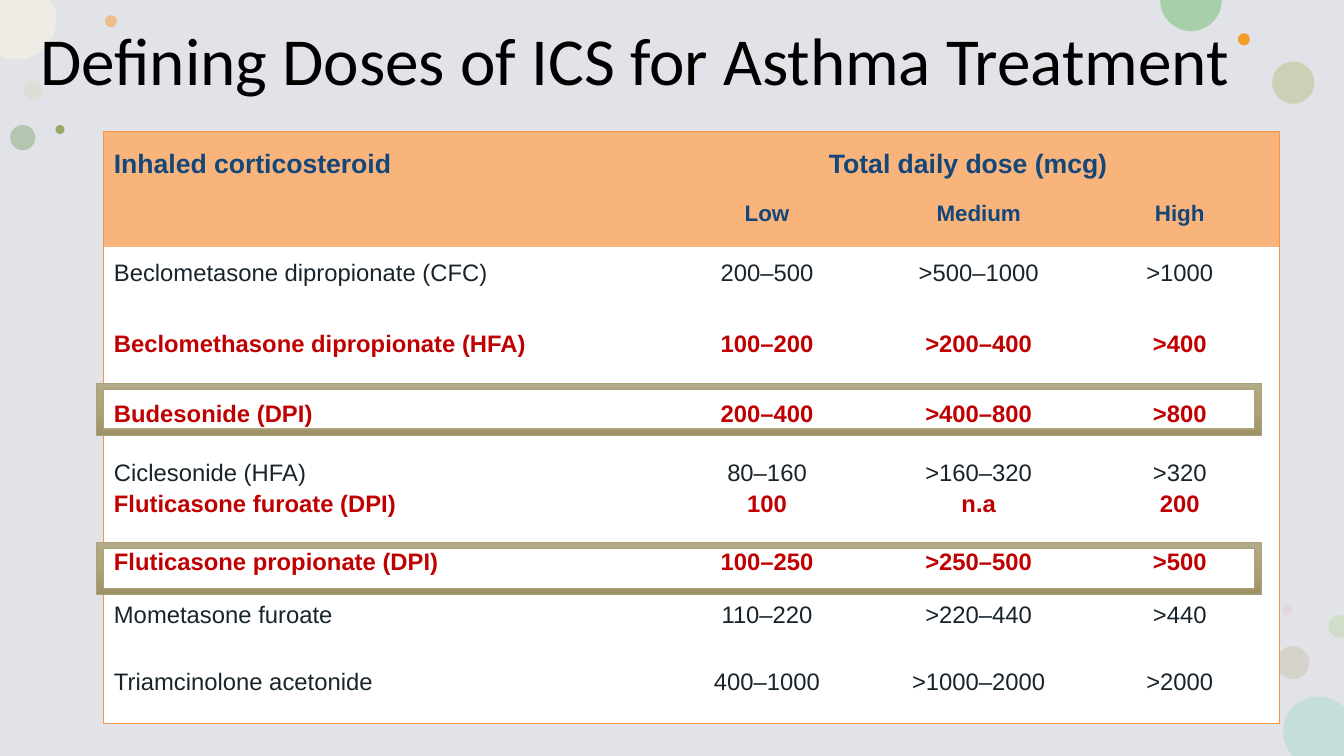
from copy import deepcopy

from lxml.etree import SubElement
from pptx import Presentation
from pptx.dml.color import RGBColor
from pptx.enum.shapes import MSO_SHAPE as Shape
from pptx.enum.text import MSO_ANCHOR as Anchor, MSO_AUTO_SIZE as Fit, PP_ALIGN as Align
from pptx.oxml import parse_xml
from pptx.oxml.ns import nsdecls, qn
from pptx.util import Inches, Pt

WIDE, HIGH = 40 / 3, 7.5
HUES = {
    "page": "E2E3E8", "black": "000000", "white": "FFFFFF",
    "head": "F9B47B", "edge": "F79646", "navy": "134679",
    "dark": "18242B", "red": "C00000", "rim": "AAA178",
    "top": "B3AB88", "mid": "ACA375", "low": "9C9266",
    "pale": "D6DCC3", "amber": "F39E29", "sand": "CCC7AE", "leaf": "8AAB79",
    "lime": "C2CBA4", "pink": "E3BEBE", "moss": "99A868",
    "aqua": "C4DEDB", "cream": "EEECE4", "mint": "A7D0AA", "sage": "D0DDC9",
}
# left, top, size, hue, opacity in percent
DOTS = [
    (0.23, 0.8, 0.19, "pale", 50), (1.04, 0.15, 0.12, "amber", 50),
    (12.66, 6.41, 0.33, "sand", 50), (0.1, 1.24, 0.25, "leaf", 50),
    (12.62, 0.61, 0.42, "lime", 72), (12.28, 0.33, 0.12, "amber", 100),
    (12.72, 6, 0.1, "pink", 28), (0.55, 1.24, 0.09, "moss", 100),
]
# hue, start, then steps: one point is a line, three points are a curve
DISCS = [
    ("aqua", (13.08, 6.91), [
        [(13.18, 6.91), (13.26, 6.95), (WIDE, 7.01)], [(WIDE, HIGH)],
        [(12.83, HIGH)], [(12.81, 7.48)],
        [(12.76, 7.42), (12.73, 7.34), (12.73, 7.26)],
        [(12.73, 7.06), (12.89, 6.91), (13.08, 6.91)]]),
    ("cream", (0, 0), [
        [(0.5, 0)], [(0.53, 0.05)],
        [(0.55, 0.09), (0.56, 0.14), (0.56, 0.2)],
        [(0.56, 0.41), (0.38, 0.59), (0.17, 0.59)],
        [(0.11, 0.59), (0.06, 0.58), (0.02, 0.56)], [(0, 0.55)]]),
    ("mint", (11.52, 0), [
        [(12.12, 0)], [(12.12, 0.01)],
        [(12.12, 0.17), (11.98, 0.31), (11.82, 0.31)],
        [(11.65, 0.31), (11.51, 0.17), (11.51, 0.01)]]),
    ("sage", (13.29, 6.1), [
        [(WIDE, 6.11)], [(WIDE, 6.32)], [(13.29, 6.33)],
        [(13.23, 6.33), (13.18, 6.28), (13.18, 6.21)],
        [(13.18, 6.15), (13.23, 6.1), (13.29, 6.1)]]),
]
COLS = [5.49, 2.18, 2.02, 1.97]
# row height, then one or more lines of (hue, texts)
DOSES = [
    (0.53, [("dark", ["Beclometasone dipropionate (CFC)", "200–500", ">500–1000", ">1000"])]),
    (0.87, [("red", ["Beclomethasone dipropionate (HFA)", "100–200", ">200–400", ">400"])]),
    (0.52, [("red", ["Budesonide (DPI)", "200–400", ">400–800", ">800"])]),
    (0.95, [("dark", ["Ciclesonide (HFA)", "80–160", ">160–320", ">320"]),
            ("red", ["Fluticasone furoate (DPI)", "100", "n.a", "200"])]),
    (0.52, [("red", ["Fluticasone propionate (DPI)", "100–250", ">250–500", ">500"])]),
    (0.52, [("dark", ["Mometasone furoate", "110–220", ">220–440", ">440"])]),
    (0.82, [("dark", ["Triamcinolone acetonide", "400–1000", ">1000–2000", ">2000"])]),
]


def rgb(hue):
    return RGBColor.from_string(HUES[hue])


def paint(shape, hue):
    shape.shadow.inherit = False
    shape.fill.solid()
    shape.fill.fore_color.rgb = rgb(hue)
    shape.line.fill.background()


def style(para, hue, **form):
    for key, val in form.items():
        setattr(para.font, key, val)
    para.font.color.rgb = rgb(hue)


def add_page(slide, left, top, width, height):
    page = slide.shapes.add_shape(Shape.RECTANGLE, *map(Inches, (left, top, width, height)))
    paint(page, "page")


def add_dot(slide, left, top, size, hue, part):
    dot = slide.shapes.add_shape(Shape.OVAL, *map(Inches, (left, top, size, size)))
    paint(dot, hue)
    if part < 100:
        tone = dot._element.spPr.find(f".//{qn('a:srgbClr')}")
        SubElement(tone, qn("a:alpha")).set("val", str(part * 1000))


def add_disc(slide, hue, start, steps):
    """Draw a circle cut off at the slide's edges, with true curves."""
    spots = [tuple(map(Inches, spot)) for step in steps for spot in step]
    pen = slide.shapes.build_freeform(*map(Inches, start))
    pen.add_line_segments(spots, close=True)
    disc = pen.convert_to_shape()
    lines = iter(disc._element.spPr.findall(f".//{qn('a:lnTo')}"))
    for step in steps:
        parts = [next(lines) for _ in step]
        if len(parts) == 3:
            curve = parse_xml(f'<a:cubicBezTo {nsdecls("a")}/>')
            parts[0].addprevious(curve)
            for part in parts:
                curve.append(part[0])
                part.getparent().remove(part)
    paint(disc, hue)


def add_title(slide, left, top, width, height):
    box = slide.shapes.add_textbox(*map(Inches, (left, top, width, height)))
    frame = box.text_frame
    frame.word_wrap = False
    frame.auto_size = Fit.SHAPE_TO_FIT_TEXT
    frame.text = "Defining Doses of ICS for Asthma Treatment"
    style(frame.paragraphs[0], "black", name="Calibri", size=Pt(48))


def fill_cell(cell, hue, lines, form, pads, col):
    """Write (hue, text) lines into a cell, centred in all but the first column."""
    cell.fill.solid()
    cell.fill.fore_color.rgb = rgb(hue)
    cell.vertical_anchor = Anchor.MIDDLE
    cell.margin_left = cell.margin_right = Inches(0.1)
    cell.margin_top, cell.margin_bottom = map(Inches, pads)
    frame = cell.text_frame
    for i, (ink, text) in enumerate(lines):
        para = frame.add_paragraph() if i else frame.paragraphs[0]
        para.text = text
        para.alignment = Align.CENTER if col else Align.LEFT
        if i:
            para.space_before = Pt(3)
        style(para, ink, name="Arial", bold=ink != "dark", **form)


def edge_cell(cell, sides):
    """Add borders on the given sides, in the order L, R, T, B."""
    props = cell._tc.get_or_add_tcPr()
    for i, side in enumerate(sides):
        props.insert(i, parse_xml(
            f'<a:ln{side} {nsdecls("a")} w="6350"><a:solidFill>'
            f'<a:srgbClr val="{HUES["edge"]}"/></a:solidFill></a:ln{side}>'))


def add_doses(slide, left, top, width, height):
    tall = [0.58, 0.57] + [dose[0] for dose in DOSES]
    spot = map(Inches, (left, top, width, height))
    table = slide.shapes.add_table(len(tall), len(COLS), *spot).table
    table.first_row = table.horz_banding = False
    plain = "{2D5ABB26-0587-4C30-8999-92F81FD0307C}"
    table._tbl.tblPr.find(qn("a:tableStyleId")).text = plain
    for col, size in zip(table.columns, COLS):
        col.width = Inches(size)
    for row, size in zip(table.rows, tall):
        row.height = Inches(size)

    heads = [(["Inhaled corticosteroid", "Total daily dose (mcg)", "", ""], 19, (0.08, 0)),
             (["", "Low", "Medium", "High"], 16, (0, 0.08))]
    for r, (texts, size, pads) in enumerate(heads):
        for c, text in enumerate(texts):
            fill_cell(table.cell(r, c), "head", [("navy", text)], {"size": Pt(size)}, pads, c)
    for r, (_, lines) in enumerate(DOSES, len(heads)):
        for c in range(len(COLS)):
            texts = [(hue, words[c]) for hue, words in lines]
            fill_cell(table.cell(r, c), "white", texts, {"size": Pt(17)}, (0.04, 0.04), c)

    table.cell(0, 1).merge(table.cell(0, 3))
    for r in range(len(tall)):
        for c in range(len(COLS)):
            tests = {"L": c == 0, "R": c == 3 or (r, c) == (0, 1),
                     "T": r == 0, "B": r == len(tall) - 1}
            edge_cell(table.cell(r, c), [side for side, on in tests.items() if on])


def add_frame(slide, left, top, width, height):
    """Draw a gradient frame that marks one row."""
    mark = slide.shapes.add_shape(Shape.FRAME, *map(Inches, (left, top, width, height)))
    mark.shadow.inherit = False
    mark.fill.gradient()
    mark.fill.gradient_angle = 270
    first = mark._element.spPr.find(f".//{qn('a:gs')}")
    first.addnext(deepcopy(first))
    stops = zip(mark.fill.gradient_stops, ("top", "mid", "low"), (0, 0.5, 1))
    for stop, hue, place in stops:
        stop.color.rgb = rgb(hue)
        stop.position = place
    mark.line.color.rgb = rgb("rim")
    mark.line.width = Pt(0.5)


def main():
    deck = Presentation()
    deck.slide_width, deck.slide_height = Inches(WIDE), Inches(HIGH)
    slide = deck.slides.add_slide(deck.slide_layouts[6])
    add_page(slide, 0, 0, WIDE, HIGH)
    for dot in DOTS:
        add_dot(slide, *dot)
    for disc in DISCS:
        add_disc(slide, *disc)
    add_doses(slide, 1.03, 1.3, 11.65, 5.88)
    add_title(slide, 0.3, 0.13, 12.74, 0.91)
    for top in (3.8, 5.38):
        add_frame(slide, 0.96, top, 11.55, 0.52)
    deck.save("out.pptx")


if __name__ == "__main__":
    main()
